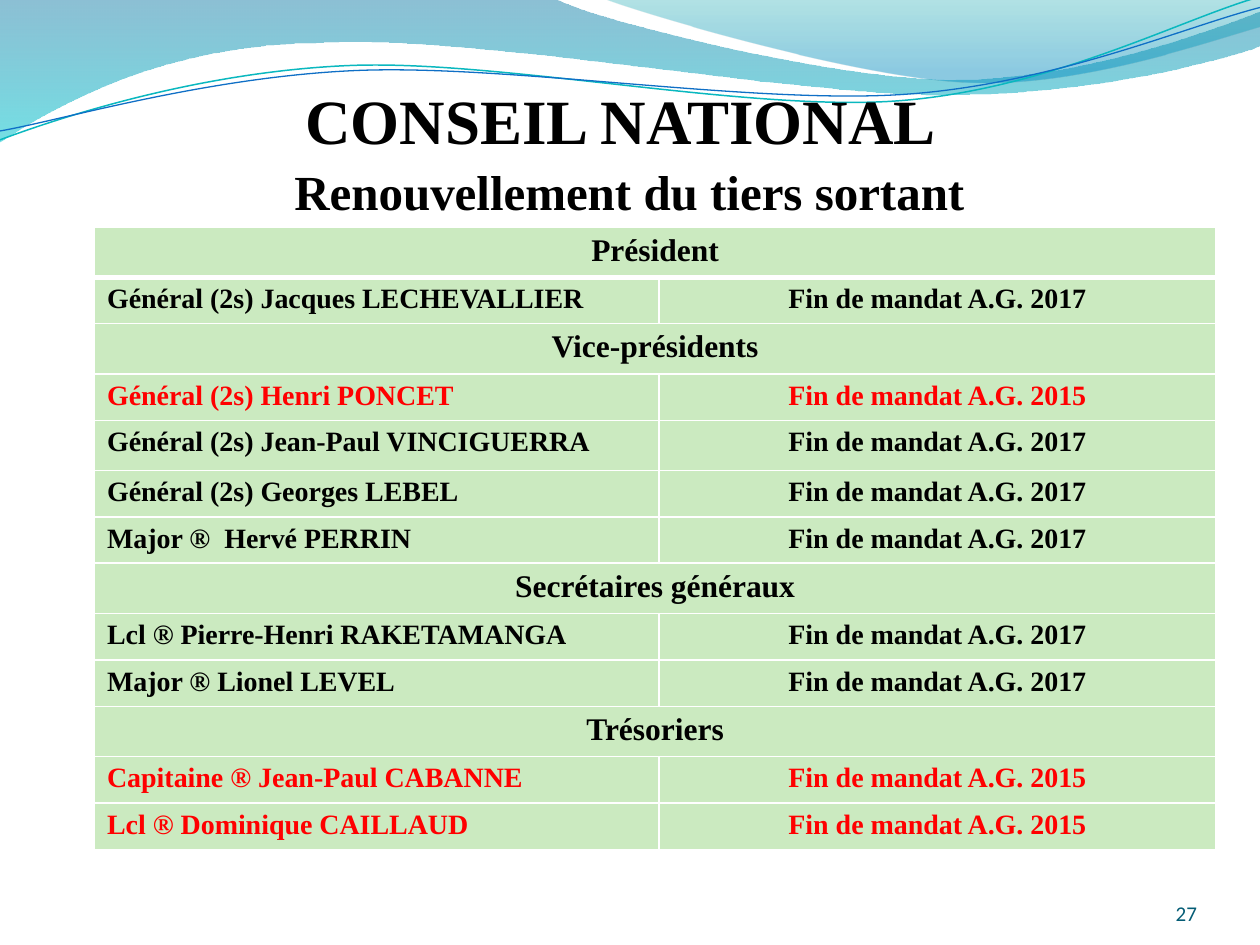
import math

import pptx
import pptx.util
import pptx.dml.color
import pptx.enum.text
from lxml import etree
from pptx.oxml.ns import qn
from pptx.util import Inches

SERIF = "Times New Roman"
BLACK, RED, WHITE, GREEN = "000000", "FF0000", "FFFFFF", "CBEAC0"
ALIGN = pptx.enum.text.PP_ALIGN
ANCHOR = pptx.enum.text.MSO_ANCHOR

SECTIONS = [
    ("Président", [("Général (2s) Jacques LECHEVALLIER", 2017)]),
    ("Vice-présidents", [
        ("Général (2s) Henri PONCET", 2015),
        ("Général (2s) Jean-Paul VINCIGUERRA", 2017),
        ("Général (2s) Georges LEBEL", 2017),
        ("Major ®  Hervé PERRIN", 2017),
    ]),
    ("Secrétaires généraux", [
        ("Lcl ® Pierre-Henri RAKETAMANGA", 2017),
        ("Major ® Lionel LEVEL", 2017),
    ]),
    ("Trésoriers", [
        ("Capitaine ® Jean-Paul CABANNE", 2015),
        ("Lcl ® Dominique CAILLAUD", 2015),
    ]),
]
TABLE_BOX = (0.75, 1.8, 8.9, 4.94)
COLUMN_WIDTHS = (4.48, 4.42)
TALL_ROWS, TALL_HEIGHT = {0, 2, 4, 7, 10}, 0.4

WAVES = [
    ((0, -0.01), [
        [(4.4, -0.01)],
        [(4.76, 0.17), (6.64, 0.63), (7.58, 0.63)],
        [(8.53, 0.63), (9.58, 0.26), (10, 0.09)],
        [(10.01, 0.36)],
        [(9.83, 0.44), (8.7, 0.76), (7.46, 0.75)],
        [(6.22, 0.75), (3.82, 0.28), (2.57, 0.34)],
        [(1.29, 0.35), (0.46, 0.83), (-0.01, 1.13)],
        [(0, -0.01)],
    ], [(0, "0074A1", 45), (100, "00C6CF", 55)]),
    ((4.79, -0.01), [
        [(5.09, 0.11), (6.82, 0.62), (7.69, 0.65)],
        [(8.56, 0.69), (9.61, 0.32), (10, 0.21)],
        [(10, 0)],
        [(4.79, -0.01)],
    ], [(0, "00A1A9", 30), (80, "008BBF", 45)]),
]
STRAND_ROTATION = 357.3
STRANDS = [
    ((0, 1.11), [
        [(0.48, 0.93), (1.58, 0.57), (2.77, 0.52)],
        [(3.95, 0.47), (5.93, 0.89), (7.13, 0.8)],
        [(8.33, 0.71), (9.38, 0.15), (9.98, -0.02)],
    ], (4.99, 0.58), "0AB8BF", 0.85),
    ((0, 1.04), [
        [(0.47, 0.96), (1.64, 0.61), (2.83, 0.56)],
        [(4.03, 0.51), (5.97, 0.83), (7.17, 0.75)],
        [(8.36, 0.67), (9.41, 0.21), (10, 0.06)],
    ], (5, 0.59), "0F6FC6", 0.75),
]


def color(value):
    return pptx.dml.color.RGBColor.from_string(value)


def write(frame, text, size=16, font=SERIF, fill=BLACK, bold=True, align=ALIGN.CENTER):
    paragraph = frame.paragraphs[0]
    paragraph.alignment = align
    run = paragraph.add_run()
    run.text = text
    run.font.size = pptx.util.Pt(size)
    run.font.name = font
    run.font.bold = bold
    run.font.color.rgb = color(fill)


def add_text(slide, box, text, inset=None, anchor=ANCHOR.TOP, **style):
    frame = slide.shapes.add_textbox(*map(Inches, box)).text_frame
    frame.word_wrap = True
    frame.vertical_anchor = anchor
    if inset is not None:
        frame.margin_left = frame.margin_right = Inches(inset)
        frame.margin_top = frame.margin_bottom = Inches(inset)
    write(frame, text, **style)


def add_outline(slide, start, segments, close):
    builder = slide.shapes.build_freeform(*map(Inches, start))
    points = [(Inches(x), Inches(y)) for segment in segments for x, y in segment]
    builder.add_line_segments(points, close=close)
    shape = builder.convert_to_shape()
    shape.shadow.inherit = False
    lines = iter(list(shape._element.iter(qn("a:lnTo"))))
    for segment in segments:
        steps = [next(lines) for _ in segment]
        if len(steps) == 3:
            curve = etree.Element(qn("a:cubicBezTo"))
            steps[0].addprevious(curve)
            for step in steps:
                curve.append(step[0])
                step.getparent().remove(step)
    return shape


def add_wave(slide, start, segments, stops):
    shape = add_outline(slide, start, segments, True)
    shape.line.fill.background()
    shape.fill.gradient()
    shape.fill.gradient_angle = 270
    for stop, (position, value, _) in zip(shape.fill.gradient_stops, stops):
        stop.position = position / 100
        stop.color.rgb = color(value)
    elements = shape._element.spPr.iter(qn("a:srgbClr"))
    for element, (_, _, opacity) in zip(elements, stops):
        etree.SubElement(element, qn("a:alpha"), val=str(opacity * 1000))


def turn(point, center, degrees):
    angle = math.radians(degrees)
    x, y = point[0] - center[0], point[1] - center[1]
    return (center[0] + x * math.cos(angle) - y * math.sin(angle),
            center[1] + x * math.sin(angle) + y * math.cos(angle))


def add_strand(slide, start, segments, center, value, width):
    level = [[turn(point, center, -STRAND_ROTATION) for point in segment] for segment in segments]
    shape = add_outline(slide, turn(start, center, -STRAND_ROTATION), level, False)
    shape.rotation = STRAND_ROTATION
    shape.fill.background()
    shape.line.color.rgb = color(value)
    shape.line.width = pptx.util.Pt(width)


def style_cell(cell, row):
    properties = cell._tc.get_or_add_tcPr()
    widths = {"lnL": 1, "lnR": 1, "lnT": 3 if row == 1 else 1, "lnB": 3 if row == 0 else 1}
    for side, width in widths.items():
        line = etree.SubElement(properties, qn("a:" + side), w=str(pptx.util.Pt(width)))
        solid = etree.SubElement(line, qn("a:solidFill"))
        etree.SubElement(solid, qn("a:srgbClr"), val=WHITE)
    cell.fill.solid()
    cell.fill.fore_color.rgb = color(GREEN)


def add_council_table(slide):
    rows = []
    for heading, members in SECTIONS:
        rows += [(heading, None), *members]
    table = slide.shapes.add_table(len(rows), 2, *map(Inches, TABLE_BOX)).table
    table.first_row = table.horz_banding = False
    for column, width in zip(table.columns, COLUMN_WIDTHS):
        column.width = Inches(width)
    low_height = (TABLE_BOX[3] - TALL_HEIGHT * len(TALL_ROWS)) / (len(rows) - len(TALL_ROWS))
    for index, (text, year) in enumerate(rows):
        table.rows[index].height = Inches(TALL_HEIGHT if index in TALL_ROWS else low_height)
        left, right = table.cell(index, 0), table.cell(index, 1)
        for cell in (left, right):
            style_cell(cell, index)
        if year is None:
            left.merge(right)
            write(left.text_frame, text, size=18)
        else:
            fill = RED if year == 2015 else BLACK
            write(left.text_frame, text, fill=fill, align=ALIGN.LEFT)
            write(right.text_frame, f"Fin de mandat A.G. {year}", fill=fill)


def main():
    presentation = pptx.Presentation()
    presentation.slide_width, presentation.slide_height = Inches(10), Inches(7.5)
    slide = presentation.slides.add_slide(presentation.slide_layouts[6])
    for wave in WAVES:
        add_wave(slide, *wave)
    for strand in STRANDS:
        add_strand(slide, *strand)
    add_text(slide, (2.01, 0.6, 5.83, 0.71), "CONSEIL NATIONAL", size=36)
    add_text(slide, (1.53, 1.23, 6.93, 0.57), "Renouvellement du tiers sortant", size=28)
    add_text(slide, (8.67, 6.95, 0.83, 0.4), "27", inset=0, anchor=ANCHOR.BOTTOM, size=12,
             font="Calibri", fill="045C75", bold=False, align=ALIGN.RIGHT)
    add_council_table(slide)
    presentation.save("out.pptx")


if __name__ == "__main__":
    main()
